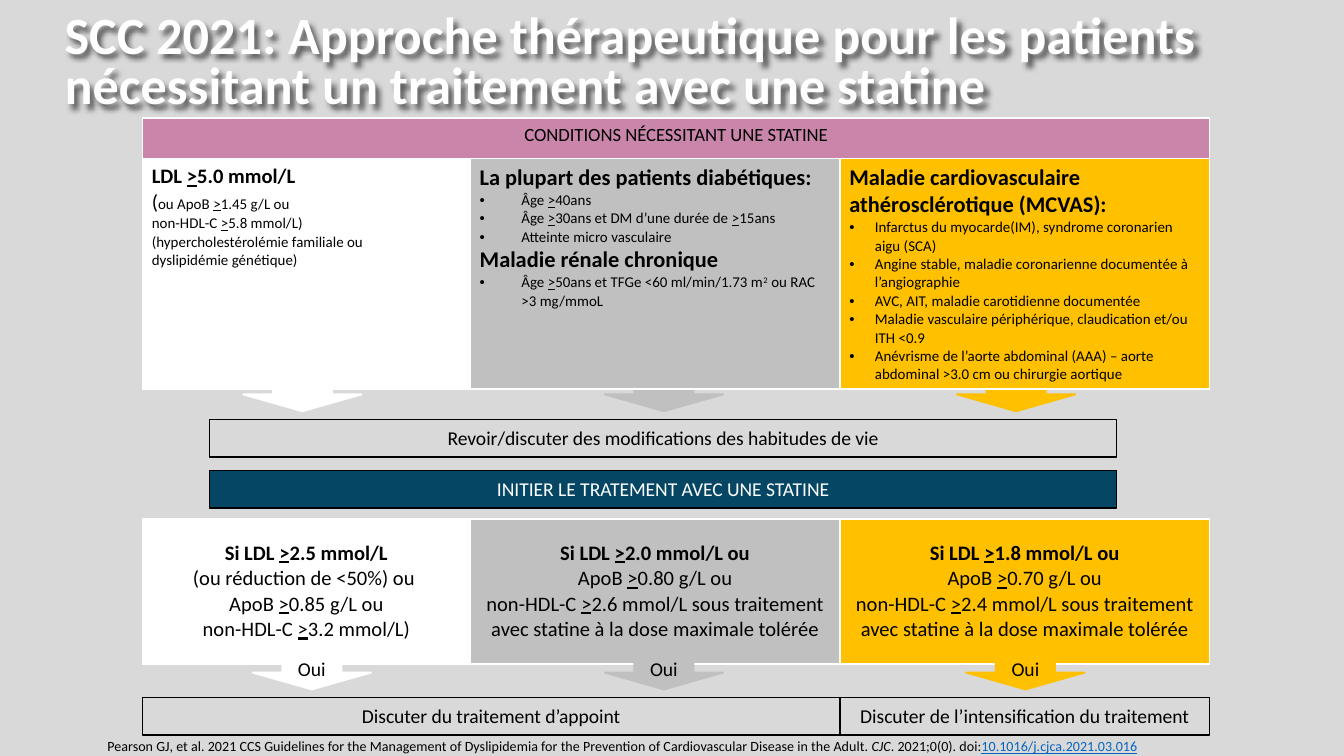
from lxml import etree
from pptx import Presentation
from pptx.dml.color import RGBColor
from pptx.enum.shapes import MSO_SHAPE
from pptx.enum.text import MSO_ANCHOR, PP_ALIGN
from pptx.oxml.ns import qn
from pptx.util import Inches, Pt

RECTANGLE, DOWN_ARROW = MSO_SHAPE.RECTANGLE, MSO_SHAPE.DOWN_ARROW
TOP, MIDDLE = MSO_ANCHOR.TOP, MSO_ANCHOR.MIDDLE
LEFT, CENTER = PP_ALIGN.LEFT, PP_ALIGN.CENTER

BLACK = RGBColor(0x00, 0x00, 0x00)
WHITE = RGBColor(0xFF, 0xFF, 0xFF)
BACKGROUND = RGBColor(0xD9, 0xD9, 0xD9)
GREY = RGBColor(0xC0, 0xC0, 0xC0)
GOLD = RGBColor(0xFF, 0xC0, 0x00)
PINK = RGBColor(0xCA, 0x86, 0xAA)
NAVY = RGBColor(0x06, 0x46, 0x65)
LINK = RGBColor(0x05, 0x63, 0xC1)

FONT = "Calibri"
PAGE_WIDTH = 10
PAGE_HEIGHT = PAGE_WIDTH * 9 / 16
COLUMN_COLORS = (WHITE, GREY, GOLD)
COLUMN_WIDTHS = (2.44, 2.75, 2.75)
TABLE_LEFT = 1.06

# A mark switches its format on, and off again at its next occurrence.
MARKS = {
    "_": {"underline": True},
    "^": {"superscript": True},
    "~": {"italic": True},
    "|": {"size": 11},
    "@": {"underline": True, "color": LINK},
}

FIRST_CONDITION = [
    ("LDL _>_5.0 mmol/L", {"size": 11, "bold": True}),
    ("|(|ou ApoB _>_1.45 g/L ou", {}),
    ("non-HDL-C _>_5.8 mmol/L)", {}),
    ("(hypercholestérolémie familiale ou", {}),
    ("dyslipidémie génétique)", {}),
]
HEADING = {"size": 12, "bold": True}
WIDE_BULLET = {"indent": 0.31}
BULLET = {"indent": 0.19}
SECOND_CONDITION = [
    ("La plupart des patients diabétiques:", HEADING),
    ("Âge _>_40ans", WIDE_BULLET),
    ("Âge _>_30ans et DM d’une durée de _>_15ans", WIDE_BULLET),
    ("Atteinte micro vasculaire", WIDE_BULLET),
    ("Maladie rénale chronique", HEADING),
    ("Âge _>_50ans et TFGe <60 ml/min/1.73 m^2^ ou RAC >3 mg/mmoL", WIDE_BULLET),
]
THIRD_CONDITION = [
    ("Maladie cardiovasculaire athérosclérotique (MCVAS):", HEADING),
    ("Infarctus du myocarde(IM), syndrome coronarien aigu (SCA)", BULLET),
    ("Angine stable, maladie coronarienne documentée à l’angiographie", BULLET),
    ("AVC, AIT, maladie carotidienne documentée", BULLET),
    ("Maladie vasculaire périphérique, claudication et/ou ITH <0.9", BULLET),
    ("Anévrisme de l’aorte abdominal (AAA) – aorte abdominal >3.0 cm "
     "ou chirurgie aortique", BULLET),
]
THRESHOLDS = [
    ["Si LDL _>_2.5 mmol/L", "(ou réduction de <50%) ou ",
     "ApoB _>_0.85 g/L ou", "non-HDL-C _>_3.2 mmol/L)"],
] + [
    [f"Si LDL _>_{ldl} mmol/L ou", f"ApoB _>_{apob} g/L ou",
     f"non-HDL-C _>_{non_hdl} mmol/L sous traitement avec statine "
     "à la dose maximale tolérée"]
    for ldl, apob, non_hdl in (("2.0", "0.80", "2.6"), ("1.8", "0.70", "2.4"))
]


def add_span(para, text, size, color, bold=False, underline=False, italic=False,
             superscript=False):
    span = para.add_run()
    span.text = text
    font = span.font
    font.name, font.size, font.bold = FONT, Pt(size), bold
    font.color.rgb = color
    font.underline, font.italic = underline, italic
    if superscript:
        span._r.get_or_add_rPr().set("baseline", "30000")


def write(para, text, size=10.5, color=BLACK, bold=False, align=LEFT, indent=None):
    """Write marked-up text into a paragraph, bulleted if an indent is given."""
    para.alignment = align
    if indent is not None:
        properties = para._p.get_or_add_pPr()
        properties.set("marL", str(Inches(indent)))
        properties.set("indent", str(-Inches(indent)))
        etree.SubElement(properties, qn("a:buFont")).set("typeface", "Arial")
        etree.SubElement(properties, qn("a:buChar")).set("char", "•")
    active, pending = {}, ""

    def flush():
        if pending:
            add_span(para, pending, **{"size": size, "color": color,
                                       "bold": bold, **active})

    for letter in text:
        if letter in MARKS:
            flush()
            pending = ""
            active = {} if active else MARKS[letter]
        else:
            pending += letter
    flush()


def write_all(frame, lines, **defaults):
    for index, (text, options) in enumerate(lines):
        para = frame.add_paragraph() if index else frame.paragraphs[0]
        write(para, text, **{**defaults, **options})


def add_block(page, kind, box, text="", fill=None, line=BLACK, width=0.75,
              color=BLACK, anchor=TOP):
    shape = page.shapes.add_shape(kind, *map(Inches, box))
    shape.shadow.inherit = False
    if fill is None:
        shape.fill.background()
    else:
        shape.fill.solid()
        shape.fill.fore_color.rgb = fill
    shape.line.color.rgb = line
    shape.line.width = Pt(width)
    shape.text_frame.word_wrap = True
    shape.text_frame.vertical_anchor = anchor
    if text:
        write(shape.text_frame.paragraphs[0], text, color=color, align=CENTER)


def add_arrows(page, lefts, top, text=""):
    for left, color in zip(lefts, COLUMN_COLORS):
        add_block(page, DOWN_ARROW, (left, top, 0.88, 0.25), text, fill=color,
                  line=color, width=1, anchor=MIDDLE)


def format_cell(cell, fill, anchor=TOP):
    cell.margin_left = cell.margin_right = Inches(0.07)
    cell.margin_top = cell.margin_bottom = Inches(0.04)
    cell.vertical_anchor = anchor
    cell.fill.solid()
    cell.fill.fore_color.rgb = fill
    properties = cell._tc.get_or_add_tcPr()
    for index, side in enumerate(("lnL", "lnR", "lnT", "lnB")):
        border = etree.Element(qn(f"a:{side}"), w=str(Pt(1)))
        solid = etree.SubElement(border, qn("a:solidFill"))
        etree.SubElement(solid, qn("a:srgbClr")).set("val", str(WHITE))
        properties.insert(index, border)


def add_grid(page, top, heights):
    frame = page.shapes.add_table(
        len(heights), len(COLUMN_WIDTHS), Inches(TABLE_LEFT), Inches(top),
        Inches(sum(COLUMN_WIDTHS)), Inches(sum(heights)))
    table = frame.table
    table.first_row = table.horz_banding = False
    for column, width in zip(table.columns, COLUMN_WIDTHS):
        column.width = Inches(width)
    for row, height in zip(table.rows, heights):
        row.height = Inches(height)
    return table


def add_conditions(page, top):
    table = add_grid(page, top, (0.3, 1.71))
    header = table.cell(0, 0)
    header.merge(table.cell(0, 2))
    for column in range(3):
        format_cell(table.cell(0, column), PINK)
    write(header.text_frame.paragraphs[0], "CONDITIONS NÉCESSITANT UNE STATINE",
          size=10, align=CENTER)
    conditions = (FIRST_CONDITION, SECOND_CONDITION, THIRD_CONDITION)
    for column, (lines, color) in enumerate(zip(conditions, COLUMN_COLORS)):
        cell = table.cell(1, column)
        format_cell(cell, color)
        write_all(cell.text_frame, lines, size=8)


def add_thresholds(page, top):
    table = add_grid(page, top, (1.08,))
    for column, (texts, color) in enumerate(zip(THRESHOLDS, COLUMN_COLORS)):
        cell = table.cell(0, column)
        format_cell(cell, color, MIDDLE)
        lines = [(text, {"bold": index == 0}) for index, text in enumerate(texts)]
        write_all(cell.text_frame, lines, size=11, align=CENTER)


def add_title(page, box, text):
    """Place the title; the shadow of the unfilled shape falls from its text."""
    title = page.shapes.title
    title.left, title.top, title.width, title.height = map(Inches, box)
    title.fill.background()
    frame = title.text_frame
    frame.word_wrap = True
    frame.vertical_anchor = MIDDLE
    para = frame.paragraphs[0]
    para.line_spacing = 0.8
    write(para, text, size=28, color=WHITE, bold=True)
    effects = etree.SubElement(title._element.spPr, qn("a:effectLst"))
    shadow = etree.SubElement(effects, qn("a:outerShdw"), blurRad=str(Pt(3)),
                              dist=str(Pt(3)), dir="2700000")
    tint = etree.SubElement(shadow, qn("a:srgbClr"), val=str(BLACK))
    etree.SubElement(tint, qn("a:alpha"), val="60000")


def add_reference(page, box):
    frame = page.shapes.add_textbox(*map(Inches, box)).text_frame
    frame.word_wrap = True
    write(frame.paragraphs[0],
          "Pearson GJ, et al. 2021 CCS Guidelines for the Management of "
          "Dyslipidemia for the Prevention of Cardiovascular Disease in the "
          "Adult. ~CJC~. 2021;0(0). doi:@10.1016/j.cjca.2021.03.016@", size=7.5)


def build_page(deck):
    page = deck.slides.add_slide(deck.slide_layouts[5])
    page.background.fill.solid()
    page.background.fill.fore_color.rgb = BACKGROUND
    add_arrows(page, (1.81, 4.5, 7.12), 2.81)
    add_title(page, (0.38, 0.05, 8.75, 0.86),
              "SCC 2021: Approche thérapeutique pour les patients "
              "nécessitant un traitement avec une statine")
    add_conditions(page, 0.88)
    add_block(page, RECTANGLE, (1.56, 3.12, 6.75, 0.28),
              "Revoir/discuter des modifications des habitudes de vie")
    add_block(page, RECTANGLE, (1.56, 3.5, 6.75, 0.28),
              "INITIER LE TRATEMENT AVEC UNE STATINE", fill=NAVY, color=WHITE)
    add_thresholds(page, 3.86)
    add_arrows(page, (1.88, 4.5, 7.19), 4.88, "Oui")
    split = sum(COLUMN_WIDTHS[:2])
    add_block(page, RECTANGLE, (TABLE_LEFT, 5.19, split, 0.28),
              "Discuter du traitement d’appoint")
    add_block(page, RECTANGLE, (TABLE_LEFT + split, 5.19, COLUMN_WIDTHS[2], 0.28),
              "Discuter de l’intensification du traitement")
    add_reference(page, (0.7, 5.44, 8.32, 0.35))


if __name__ == "__main__":
    deck = Presentation()
    deck.slide_width, deck.slide_height = Inches(PAGE_WIDTH), Inches(PAGE_HEIGHT)
    build_page(deck)
    deck.save("out.pptx")
